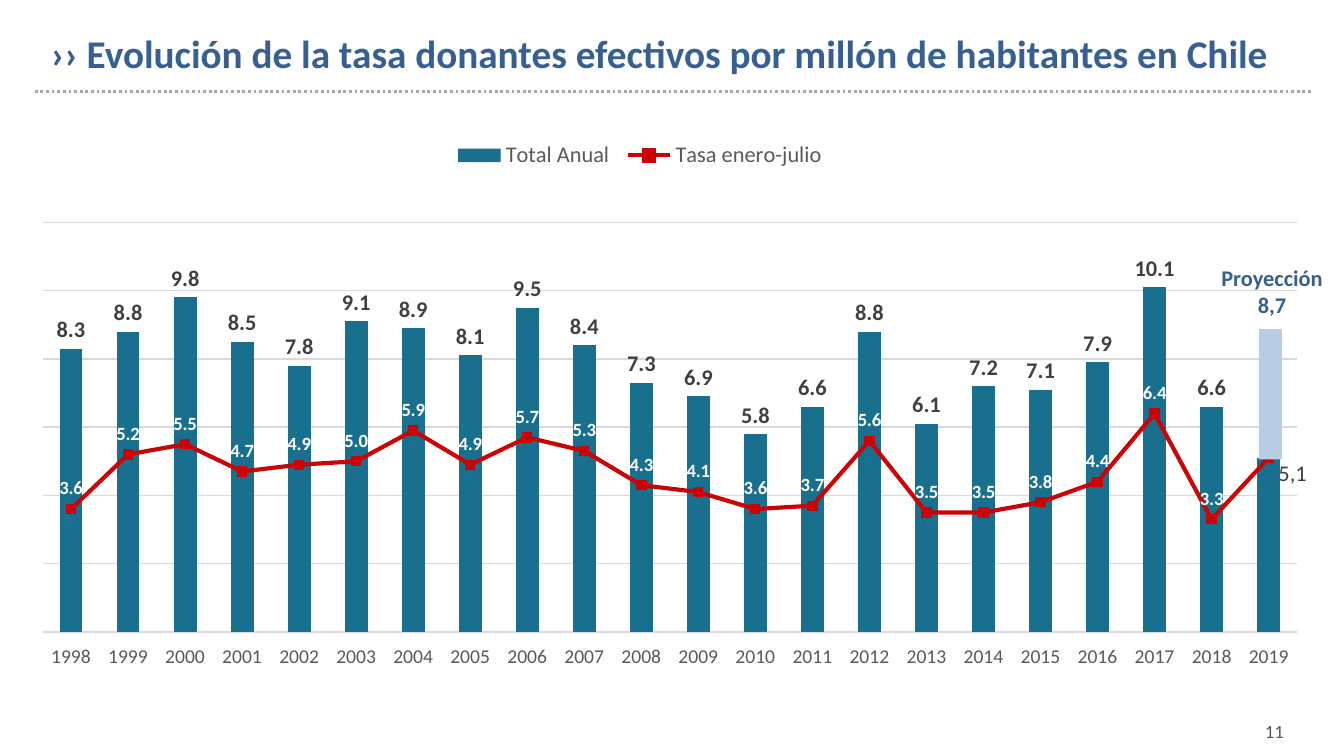
from dataclasses import dataclass

from lxml import etree
from pptx import Presentation
from pptx.chart.data import CategoryChartData
from pptx.dml.color import RGBColor
from pptx.enum.chart import (XL_CHART_TYPE, XL_LABEL_POSITION, XL_LEGEND_POSITION,
                             XL_MARKER_STYLE, XL_TICK_LABEL_POSITION, XL_TICK_MARK)
from pptx.enum.dml import MSO_LINE
from pptx.enum.shapes import MSO_CONNECTOR, MSO_SHAPE
from pptx.enum.text import MSO_ANCHOR, PP_ALIGN
from pptx.oxml import parse_xml
from pptx.oxml.ns import nsdecls, qn
from pptx.util import Pt

BARS = XL_CHART_TYPE.COLUMN_CLUSTERED
ABOVE, OUTER = XL_LABEL_POSITION.ABOVE, XL_LABEL_POSITION.OUTSIDE_END
BOTTOM, SQUARE = XL_LEGEND_POSITION.BOTTOM, XL_MARKER_STYLE.SQUARE
LOW, NO_TICK = XL_TICK_LABEL_POSITION.LOW, XL_TICK_MARK.NONE
DOTS, STRAIGHT, RECT = MSO_LINE.ROUND_DOT, MSO_CONNECTOR.STRAIGHT, MSO_SHAPE.RECTANGLE
TOP, MIDDLE = MSO_ANCHOR.TOP, MSO_ANCHOR.MIDDLE
LEFT, CENTER, RIGHT = PP_ALIGN.LEFT, PP_ALIGN.CENTER, PP_ALIGN.RIGHT

BLACK = RGBColor(0x00, 0x00, 0x00)
WHITE = RGBColor(0xFF, 0xFF, 0xFF)
NAVY = RGBColor(0x37, 0x60, 0x92)
TEAL = RGBColor(0x19, 0x70, 0x8E)
RED = RGBColor(0xCC, 0x03, 0x04)
PALE = RGBColor(0xB9, 0xCD, 0xE5)
DARK = RGBColor(0x40, 0x40, 0x40)
GRAY = RGBColor(0x59, 0x59, 0x59)
RULE = RGBColor(0xA6, 0xA6, 0xA6)
GRID = RGBColor(0xD9, 0xD9, 0xD9)
FACE = "Calibri"

YEARS = [str(year) for year in range(1998, 2020)]
TOTAL = [8.3, 8.8, 9.8, 8.5, 7.8, 9.1, 8.9, 8.1, 9.5, 8.4, 7.3,
         6.9, 5.8, 6.6, 8.8, 6.1, 7.2, 7.1, 7.9, 10.1, 6.6, 5.1]
RATE = [3.6, 5.2, 5.5, 4.7, 4.9, 5.0, 5.9, 4.9, 5.7, 5.3, 4.3,
        4.1, 3.6, 3.7, 5.6, 3.5, 3.5, 3.8, 4.4, 6.4, 3.3, 5.1]
LAST = len(YEARS) - 1


@dataclass
class Label:
    lines: list[str]
    box: tuple[float, float, float, float]
    size: float
    color: RGBColor
    bold: bool = False
    align: PP_ALIGN = LEFT
    anchor: MSO_ANCHOR = TOP
    wrap: bool = False


LABELS = [
    Label(["11"], (662.4, 382.3, 32.4, 19.4), 10, GRAY, align=RIGHT),
    Label(["Proyección", "8,7"], (646.6, 138.2, 69.8, 36), 12, NAVY, True, CENTER),
    Label(["›› Evolución de la tasa donantes efectivos por millón de habitantes en Chile"],
          (20.2, 7.9, 688.3, 41), 21, NAVY, True, anchor=MIDDLE, wrap=True),
]


def put(item, values: dict) -> None:
    for name, value in values.items():
        setattr(item, name, value)


def style(font, size: float, color: RGBColor, bold: bool = False) -> None:
    put(font, {"name": FACE, "size": Pt(size), "bold": bold})
    font.color.rgb = color


def ink(line, color: RGBColor, width: float) -> None:
    line.color.rgb = color
    line.width = Pt(width)


def write(slide, label: Label) -> None:
    frame = slide.shapes.add_textbox(*map(Pt, label.box)).text_frame
    put(frame, {"word_wrap": label.wrap, "vertical_anchor": label.anchor})
    for i, line in enumerate(label.lines):
        para = frame.add_paragraph() if i else frame.paragraphs[0]
        para.alignment = label.align
        run = para.add_run()
        run.text = line
        style(run.font, label.size, label.color, label.bold)


def layout(x: float, y: float, w: float = 0, h: float = 0, inner: bool = False):
    """Manual chart layout; without a size it is an offset."""
    target = '<c:layoutTarget val="inner"/>' if inner else ""
    modes = '<c:xMode val="edge"/><c:yMode val="edge"/>' if w else ""
    size = f'<c:w val="{w}"/><c:h val="{h}"/>' if w else ""
    return parse_xml(f'<c:layout {nsdecls("c")}><c:manualLayout>{target}{modes}'
                     f'<c:x val="{x}"/><c:y val="{y}"/>{size}</c:manualLayout></c:layout>')


def place(parent, after: str, item) -> None:
    for old in parent.findall(qn("c:layout")):
        parent.remove(old)
    mark = parent.find(qn(after)) if after else None
    parent.insert(0 if mark is None else parent.index(mark) + 1, item)


def split(chart) -> None:
    """Move the second series to a line plot on the same axes."""
    bar = chart.plots[0]._element
    ser = bar.findall(qn("c:ser"))[1]
    for flag in ser.findall(qn("c:invertIfNegative")):
        ser.remove(flag)
    axes = "".join(f'<c:axId val="{a.get("val")}"/>' for a in bar.findall(qn("c:axId")))
    line = parse_xml(f'<c:lineChart {nsdecls("c")}><c:grouping val="standard"/>'
                     f'<c:varyColors val="0"/><c:marker val="1"/>{axes}</c:lineChart>')
    line.insert(2, ser)
    bar.addnext(line)


def tag(series, place_at: XL_LABEL_POSITION, size: float, color: RGBColor):
    labels = series.data_labels
    put(labels, {"show_value": True, "number_format": "0.0",
                 "number_format_is_linked": False, "position": place_at})
    style(labels.font, size, color, True)
    return labels


def draw_chart(slide) -> None:
    data = CategoryChartData(number_format="0.0")
    data.categories = YEARS
    data.add_series("Total Anual", TOTAL)
    data.add_series("Tasa enero-julio", RATE)
    box = map(Pt, (-10, 72.7, 712.8, 299.5))
    chart = slide.shapes.add_chart(BARS, *box, data).chart
    put(chart, {"has_title": False, "has_legend": True})
    style(chart.font, 10, BLACK)
    split(chart)
    area = chart._chartSpace.find(qn("c:chart")).find(qn("c:plotArea"))
    place(area, "", layout(0.046, 0.155, 0.943, 0.733, True))

    # Axes and legend
    cat, val = chart.category_axis, chart.value_axis
    put(cat, {"major_tick_mark": NO_TICK, "minor_tick_mark": NO_TICK,
              "tick_label_position": LOW})
    style(cat.tick_labels.font, 10.5, GRAY)
    ink(cat.format.line, GRID, 0.75)
    put(val, {"minimum_scale": 0, "maximum_scale": 12, "major_unit": 2,
              "has_major_gridlines": True, "visible": False})
    ink(val.major_gridlines.format.line, GRID, 0.75)
    legend = chart.legend
    put(legend, {"position": BOTTOM, "include_in_layout": False})
    style(legend.font, 12, GRAY)
    place(legend._element, "c:legendPos", layout(0.35, 0.0, 0.29, 0.07))

    # Yearly bars
    plot = chart.plots[0]
    put(plot, {"gap_width": 150, "vary_by_categories": False})
    bars = plot.series[0]
    bars.format.fill.solid()
    bars.format.fill.fore_color.rgb = TEAL
    labels = tag(bars, OUTER, 12, DARK)
    note = bars.points[LAST].data_label
    run = note.text_frame.paragraphs[0].add_run()
    run.text = "5,1"
    style(run.font, 12, DARK)
    note.position = OUTER
    place(labels._element.find(qn("c:dLbl")), "c:idx", layout(0.018, 0.062))

    # January to July line
    rate = chart.plots[1].series[0]
    rate.smooth = False
    ink(rate.format.line, RED, 2.25)
    put(rate.marker, {"style": SQUARE, "size": 5})
    rate.marker.format.fill.solid()
    rate.marker.format.fill.fore_color.rgb = RED
    ink(rate.marker.format.line, RED, 0.75)
    labels = tag(rate, ABOVE, 10, WHITE)
    labels._element.insert(0, parse_xml(
        f'<c:dLbl {nsdecls("c")}><c:idx val="{LAST}"/><c:delete val="1"/></c:dLbl>'))


def main() -> None:
    deck = Presentation()
    put(deck, {"slide_width": Pt(720), "slide_height": Pt(405)})
    slide = deck.slides.add_slide(deck.slide_layouts[6])
    draw_chart(slide)

    # Projected part of the last bar
    rest = slide.shapes.add_shape(RECT, *map(Pt, (674.6, 176.4, 12.2, 69.8)))
    rest.shadow.inherit = False
    rest.fill.solid()
    rest.fill.fore_color.rgb = PALE
    rest.line.fill.background()

    for label in LABELS:
        write(slide, label)

    # Dotted rule under the title
    rule = slide.shapes.add_connector(STRAIGHT, *map(Pt, (18.7, 49, 702.7, 49)))
    ink(rule.line, RULE, 1.5)
    rule.line.dash_style = DOTS
    etree.SubElement(rule._element.spPr, qn("a:effectLst"))
    deck.save("out.pptx")


if __name__ == "__main__":
    main()
